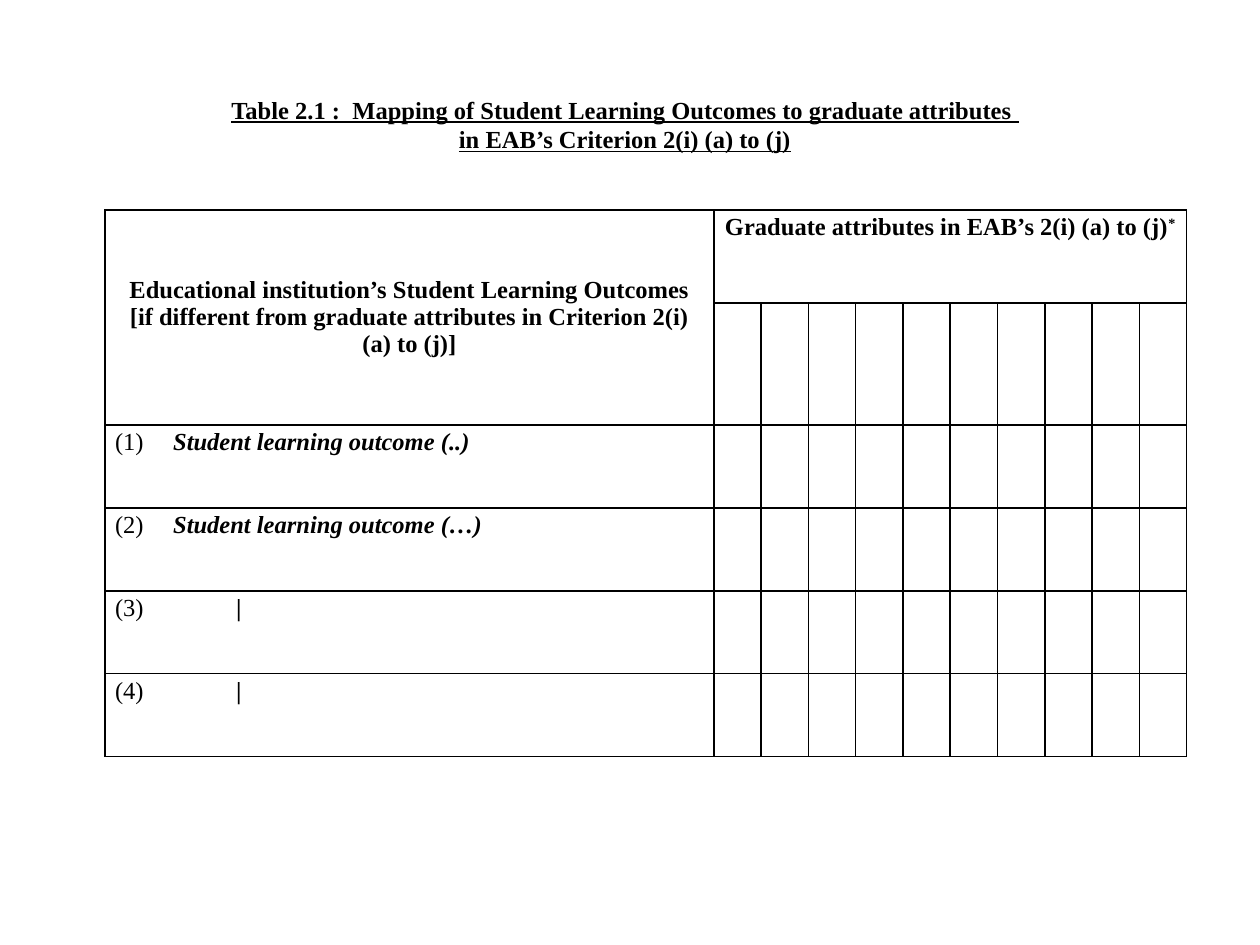
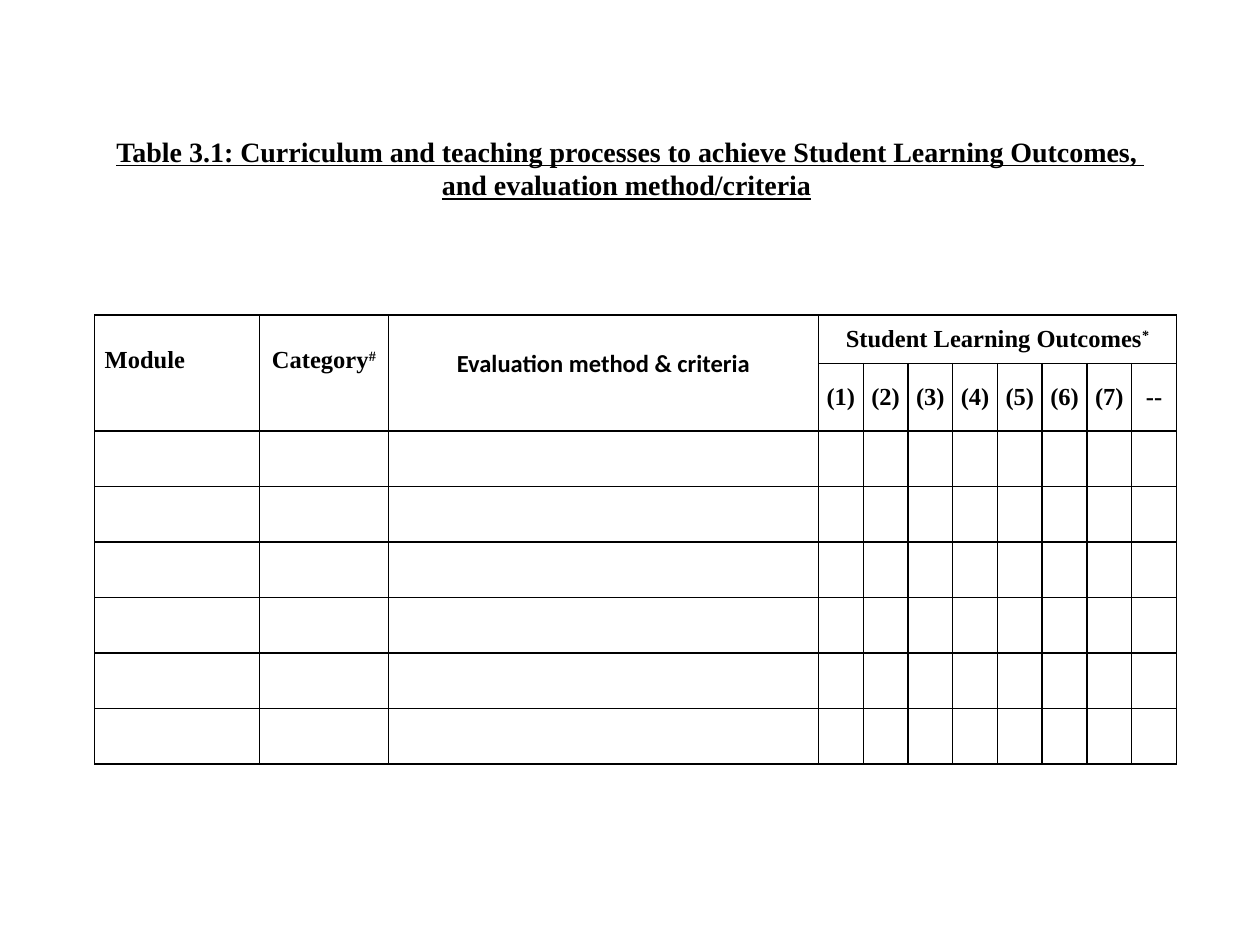
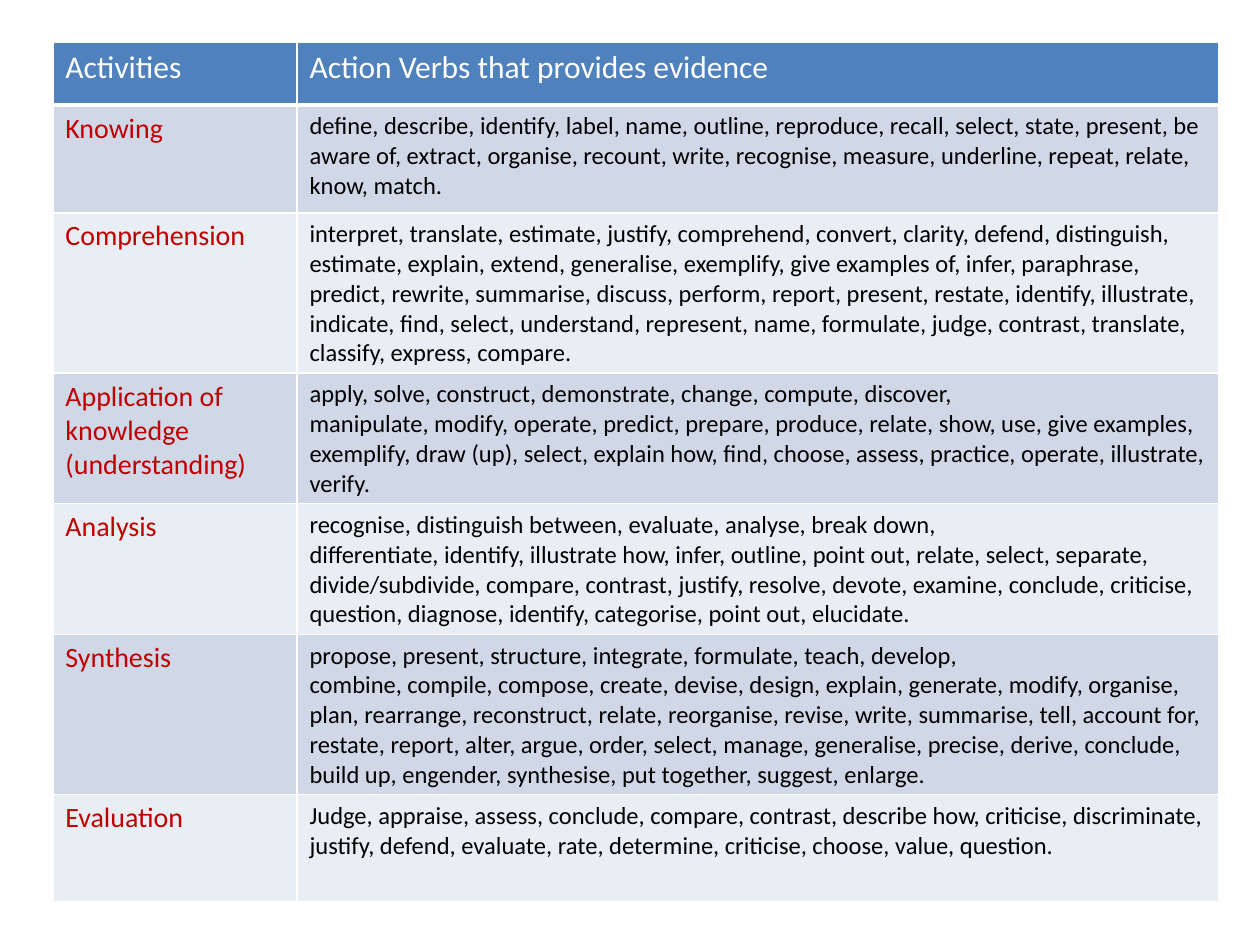
"""Build three slides of tables on learning outcomes and action verbs."""
from lxml.etree import SubElement
from pptx import Presentation
from pptx.dml.color import RGBColor
from pptx.enum.text import MSO_ANCHOR, PP_ALIGN
from pptx.oxml.ns import qn
from pptx.util import Cm, Pt

BLACK, WHITE, RED, BLUE = "000000", "FFFFFF", "C00000", "4F81BD"
BANDS = ("D0D8E8", "E9EDF4")
SERIF, SANS = "Times New Roman", "Calibri"
MID, LEFT, FULL = PP_ALIGN.CENTER, PP_ALIGN.LEFT, PP_ALIGN.JUSTIFY
BOLD = {"name": SERIF, "size": Pt(14), "bold": True}
PLAIN = {**BOLD, "bold": False}
SLANT = {**BOLD, "italic": True}
WIDE = (0.2, 0.08, 0.2, 0.08)
SLIM = (0.08, 0.08, 0.08, 0.08)
LOOSE = (0.25, 0.13, 0.25, 0.13)

VERBS = {
    "Knowing": "define, describe, identify, label, name, outline, reproduce, recall, select, state, "
    "present, be aware of, extract, organise, recount, write, recognise, measure, underline, "
    "repeat, relate, know, match.",
    "Comprehension": "interpret, translate, estimate, justify, comprehend, convert, clarity, defend, "
    "distinguish, estimate, explain, extend, generalise, exemplify, give examples of, infer, "
    "paraphrase, predict, rewrite, summarise, discuss, perform, report, present, restate, "
    "identify, illustrate, indicate, find, select, understand, represent, name, formulate, "
    "judge, contrast, translate, classify, express, compare.",
    "Application of knowledge (understanding)": "apply, solve, construct, demonstrate, change, "
    "compute, discover,\nmanipulate, modify, operate, predict, prepare, produce, relate, show, "
    "use, give examples, exemplify, draw (up), select, explain how, find, choose, assess, "
    "practice, operate, illustrate, verify.",
    "Analysis": "recognise, distinguish between, evaluate, analyse, break down,\n"
    "differentiate, identify, illustrate how, infer, outline, point out, relate, select, "
    "separate, divide/subdivide, compare, contrast, justify, resolve, devote, examine, "
    "conclude, criticise, question, diagnose, identify, categorise, point out, elucidate.",
    "Synthesis": "propose, present, structure, integrate, formulate, teach, develop,\n"
    "combine, compile, compose, create, devise, design, explain, generate, modify, organise, "
    "plan, rearrange, reconstruct, relate, reorganise, revise, write, summarise, tell, account "
    "for, restate, report, alter, argue, order, select, manage, generalise, precise, derive, "
    "conclude, build up, engender, synthesise, put together, suggest, enlarge.",
    "Evaluation": "Judge, appraise, assess, conclude, compare, contrast, describe how, criticise, "
    "discriminate, justify, defend, evaluate, rate, determine, criticise, choose, value, question.",
}


def hue(code):
    """Turn a hex string into a colour."""
    return RGBColor.from_string(code)


class Pen:
    """Hold the deck, the current slide and the shared style."""

    def __init__(self):
        """Open an empty deck of 10 by 7.5 inches."""
        self.deck = Presentation()
        self.deck.slide_width, self.deck.slide_height = Cm(25.4), Cm(19.05)

    def page(self):
        """Start a blank slide."""
        self.slide = self.deck.slides.add_slide(self.deck.slide_layouts[6])

    def style(self, run, look, ink=BLACK):
        """Give a run its font values and colour."""
        for key, value in look.items():
            setattr(run.font, key, value)
        run.font.color.rgb = hue(ink)

    def label(self, frame, text, look, align=LEFT, ink=BLACK):
        """Set lines of text, raising what follows a caret."""
        for row, line in enumerate(text.split("\n")):
            para = frame.add_paragraph() if row else frame.paragraphs[0]
            para.alignment = align
            base, _, note = line.partition("^")
            para.text = base
            if note:
                mark = para.add_run()
                mark.text = note
                mark._r.get_or_add_rPr().set("baseline", "30000")
            for run in para.runs:
                self.style(run, look, ink)

    def title(self, text, place, size):
        """Add a centred, underlined title and return its frame."""
        frame = self.slide.shapes.add_textbox(*map(Cm, place)).text_frame
        frame.word_wrap, frame.vertical_anchor = True, MSO_ANCHOR.MIDDLE
        self.label(frame, text, {**BOLD, "size": Pt(size), "underline": True}, MID)
        return frame

    def edge(self, cell, side, ink, width=1):
        """Draw one side of a cell, or clear it when there is no ink."""
        line = SubElement(cell._tc.get_or_add_tcPr(), qn(f"a:ln{side}"), w=str(Pt(width)))
        if ink:
            SubElement(SubElement(line, qn("a:solidFill")), qn("a:srgbClr"), val=ink)
        else:
            SubElement(line, qn("a:noFill"))

    def grid(self, left, top, cols, rows, ink, bare=(), base=1):
        """Add an unfilled table with ruled cells, without the bare sides."""
        frame = self.slide.shapes.add_table(
            len(rows), len(cols), Cm(left), Cm(top), Cm(sum(cols)), Cm(sum(rows)))
        table = frame.table
        table.first_row = table.horz_banding = False
        for col, size in zip(table.columns, cols):
            col.width = Cm(size)
        for row, size in zip(table.rows, rows):
            row.height = Cm(size)
        for y in range(len(rows)):
            for x in range(len(cols)):
                cell = table.cell(y, x)
                for side in "LRTB":
                    thick = base if (y, side) == (0, "B") else 1
                    self.edge(cell, side, None if (y, x, side) in bare else ink, thick)
                cell.fill.background()
        return table

    def fill(self, cell, text, look, align=LEFT, ink=BLACK, pad=WIDE, mid=False, back=None):
        """Set the text, margins, anchor and fill of a cell."""
        for side, size in zip(("left", "top", "right", "bottom"), pad):
            setattr(cell, f"margin_{side}", Cm(size))
        cell.vertical_anchor = MSO_ANCHOR.MIDDLE if mid else MSO_ANCHOR.TOP
        if back:
            cell.fill.solid()
            cell.fill.fore_color.rgb = hue(back)
        self.label(cell.text_frame, text, look, align, ink)


def goals(pen):
    """Map learning outcomes to graduate attributes."""
    pen.page()
    items = ("Student learning outcome (..)", "Student learning outcome (…)", "\t|", "\t|")
    bare = {(y, x, side) for y in range(2, 6) for x, side in enumerate("RL")}
    cols = [1.17, 11.1] + [9.53 / 10] * 10
    table = pen.grid(2.12, 4.23, cols, [1.88, 2.46] + [1.67] * 4, BLACK, bare)
    table.cell(0, 0).merge(table.cell(1, 1))
    table.cell(0, 2).merge(table.cell(0, 11))
    pen.fill(table.cell(0, 0), "Educational institution’s Student Learning Outcomes\v"
             "[if different from graduate attributes in Criterion 2(i) (a) to (j)]",
             BOLD, MID, mid=True)
    pen.fill(table.cell(0, 2), "Graduate attributes in EAB’s 2(i) (a) to (j)^*",
             BOLD, MID, pad=SLIM)
    for num, item in enumerate(items, 1):
        pen.fill(table.cell(num + 1, 0), f"({num})", PLAIN, pad=(0.2, 0.08, 0.08, 0.08))
        pen.fill(table.cell(num + 1, 1), item, BOLD if "|" in item else SLANT, FULL)
    pen.title("Table 2.1 :  Mapping of Student Learning Outcomes to graduate attributes \n"
              "in EAB’s Criterion 2(i) (a) to (j)", (1.27, 1.78, 22.66, 1.45), 14)


def course(pen):
    """Lay out modules against learning outcomes."""
    pen.page()
    cols = [3.32, 2.6, 8.67] + [7.22 / 8] * 8
    table = pen.grid(1.91, 6.35, cols, [0.98, 1.35] + [1.12] * 6, BLACK)
    heads = (("Module", SERIF, LEFT, 0.64), ("Category^#", SERIF, MID, 0.64),
             ("Evaluation method & criteria", SANS, MID, 0.68))
    for x, (text, face, align, top) in enumerate(heads):
        table.cell(0, x).merge(table.cell(1, x))
        pen.fill(table.cell(0, x), text, {**BOLD, "name": face}, align,
                 pad=(0.2, top, 0.2, 0.08))
    table.cell(0, 3).merge(table.cell(0, 10))
    pen.fill(table.cell(0, 3), "Student Learning Outcomes^*", BOLD, MID, pad=SLIM, mid=True)
    for x, text in enumerate([f"({num})" for num in range(1, 8)] + ["--"], 3):
        pen.fill(table.cell(1, x), text, BOLD, MID, pad=SLIM, mid=True)
    frame = pen.title("Table 3.1: Curriculum and teaching processes to achieve Student Learning "
                      "Outcomes, \nand evaluation method/criteria", (1.7, 2.57, 22.02, 1.63), 16)
    space = frame.paragraphs[-1].add_run()
    space.text = " "
    pen.style(space, {"name": "Arial", "size": Pt(16), "bold": True})


def verbs(pen):
    """List the action verbs of each activity."""
    pen.page()
    rows = [1.27, 2.17, 3.23, 2.62, 2.62, 3.23, 2.17]
    table = pen.grid(1.07, 0.85, [4.92, 18.57], rows, WHITE, base=3)
    lines = [("Activities", "Action Verbs that provides evidence"), *VERBS.items()]
    for y, line in enumerate(lines):
        looks = ((16, RED), (14, BLACK)) if y else ((18, WHITE),) * 2
        back = BANDS[(y - 1) % 2] if y else BLUE
        for x, (text, (size, ink)) in enumerate(zip(line, looks)):
            pen.fill(table.cell(y, x), text, {"name": SANS, "size": Pt(size)},
                     ink=ink, pad=LOOSE, back=back)


def main():
    """Build the deck and save it."""
    pen = Pen()
    for build in (goals, course, verbs):
        build(pen)
    pen.deck.save("out.pptx")


if __name__ == "__main__":
    main()
